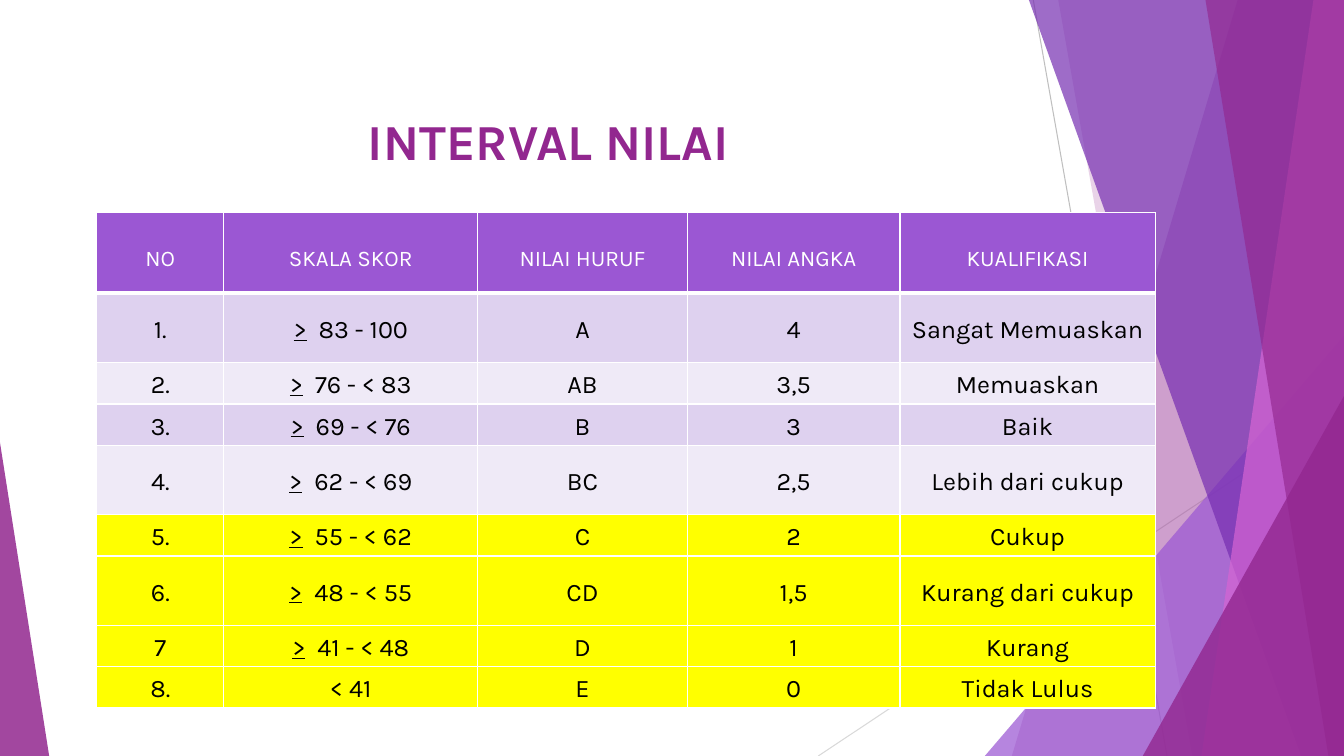
from lxml.etree import SubElement
from pptx import Presentation
from pptx.dml.color import RGBColor
from pptx.enum.shapes import MSO_CONNECTOR, MSO_SHAPE
from pptx.enum.text import MSO_ANCHOR, PP_ALIGN
from pptx.oxml.ns import qn
from pptx.util import Cm, Pt

FONT = "Karla"
COLORS = {
    "plum": "92278F",
    "violet": "9B57D3",
    "indigo": "762EB1",
    "pink": "D665D3",
    "lilac": "DED1EF",
    "pale": "EFEAF7",
    "yellow": "FFFF00",
    "white": "FFFFFF",
    "black": "000000",
    "gray": "BFBFBF",
    "silver": "D9D9D9",
}
WIDTH, HEIGHT = 33.87, 19.05
COLUMN_WIDTHS = [3.2, 6.4, 5.28, 5.36, 6.43]
HEADER_HEIGHT, TALL_ROW, SHORT_ROW = 2.03, 1.75, 1.04
TALL_GRADES = ("A", "BC", "CD")
HEADINGS = ["NO", "SKALA SKOR", "NILAI HURUF", "NILAI ANGKA", "KUALIFIKASI"]
GRADES = [
    ["1.", ">  83 - 100", "A", "4", "Sangat Memuaskan"],
    ["2.", ">  76 - < 83", "AB", "3,5", "Memuaskan"],
    ["3.", ">  69 - < 76", "B", "3", "Baik"],
    ["4.", ">  62 - < 69", "BC", "2,5", "Lebih dari cukup"],
    ["5.", ">  55 - < 62", "C", "2", "Cukup"],
    ["6.", ">  48 - < 55", "CD", "1,5", "Kurang dari cukup"],
    ["7", ">  41 - < 48", "D", "1", "Kurang"],
    ["8.", "< 41", "E", "0", "Tidak Lulus"],
]
FIRST_YELLOW_ROW = 5


def rgb(name):
    return RGBColor.from_string(COLORS[name])


def paint(shape, color, opacity):
    """Give a shape a translucent fill with no outline or shadow."""
    shape.shadow.inherit = False
    shape.line.fill.background()
    shape.fill.solid()
    shape.fill.fore_color.rgb = rgb(color)
    solid_color = shape.element.spPr.find(qn("a:solidFill"))[0]
    SubElement(solid_color, qn("a:alpha"), val=str(opacity * 1000))


def add_line(slide, start, end, color):
    line = slide.shapes.add_connector(
        MSO_CONNECTOR.STRAIGHT, *(Cm(value) for value in (*start, *end)))
    line.line.color.rgb = rgb(color)
    line.line.width = Pt(0.75)
    SubElement(line.element.spPr, qn("a:effectLst"))


def add_band(slide, top_x, bottom_x, color, opacity):
    """Fill the area from a slanted left edge to the slide's right edge."""
    builder = slide.shapes.build_freeform(Cm(top_x), 0)
    corners = [(WIDTH, 0), (WIDTH, HEIGHT), (bottom_x, HEIGHT)]
    builder.add_line_segments([(Cm(x), Cm(y)) for x, y in corners])
    paint(builder.convert_to_shape(), color, opacity)


def add_corner(slide, left, top, width, apex, color, opacity):
    """Add a triangle that stands on the slide's bottom edge."""
    triangle = slide.shapes.add_shape(
        MSO_SHAPE.ISOSCELES_TRIANGLE,
        Cm(left), Cm(top), Cm(width), Cm(HEIGHT - top))
    triangle.adjustments[0] = apex
    paint(triangle, color, opacity)


def add_decoration(slide):
    add_line(slide, (26.04, 0), (29.41, HEIGHT), "gray")
    add_line(slide, (WIDTH, 10.24), (20.62, HEIGHT), "silver")
    add_band(slide, 31.19, 25.5, "plum", 30)
    add_band(slide, 26.67, 30.05, "plum", 20)
    add_corner(slide, 24.82, 8.46, 9.05, 1, "violet", 72)
    add_band(slide, 25.93, 32.79, "indigo", 70)
    add_band(slide, 33.1, 30.28, "pink", 70)
    add_band(slide, 30.38, 33.48, "plum", 65)
    add_corner(slide, 28.8, 9.98, 5.07, 1, "plum", 80)
    add_corner(slide, 0, 11.15, 1.24, 0, "plum", 85)


def format_paragraph(paragraph, size, color, bold=False):
    paragraph.alignment = PP_ALIGN.CENTER
    paragraph.font.name = FONT
    paragraph.font.size = Pt(size)
    paragraph.font.bold = bold
    paragraph.font.color.rgb = rgb(color)


def place_title(slide, text):
    title = slide.shapes.title
    title.left, title.top, title.width, title.height = (
        Cm(1.88), Cm(1.7), Cm(23.88), Cm(3.66))
    title.text_frame.text = text
    title.text_frame.vertical_anchor = MSO_ANCHOR.MIDDLE
    format_paragraph(title.text_frame.paragraphs[0], 36, "plum", bold=True)
    title.element.getparent().append(title.element)


def set_borders(cell, bottom_width):
    properties = cell._tc.get_or_add_tcPr()
    widths = {"a:lnL": 1, "a:lnR": 1, "a:lnT": 1, "a:lnB": bottom_width}
    for tag, width in widths.items():
        border = SubElement(properties, qn(tag), w=str(Pt(width)))
        fill = SubElement(border, qn("a:solidFill"))
        SubElement(fill, qn("a:srgbClr"), val=COLORS["white"])


def write_cell(cell, text, fill, is_header):
    set_borders(cell, 3 if is_header else 1)
    cell.fill.solid()
    cell.fill.fore_color.rgb = rgb(fill)
    cell.vertical_anchor = MSO_ANCHOR.MIDDLE
    cell.margin_left = cell.margin_right = Cm(0.18)
    cell.margin_top = cell.margin_bottom = 0
    paragraph = cell.text_frame.paragraphs[0]
    paragraph.line_spacing = 1.5 if is_header else 1.15
    if text.startswith(">"):
        sign = paragraph.add_run()
        sign.text = ">"
        sign.font.underline = True
        text = text[1:]
    paragraph.add_run().text = text
    format_paragraph(paragraph, 16 if is_header else 18,
                     "white" if is_header else "black")


def row_fill(row):
    if row == 0:
        return "violet"
    if row >= FIRST_YELLOW_ROW:
        return "yellow"
    return "lilac" if row % 2 else "pale"


def add_grade_table(slide):
    rows = [HEADINGS, *GRADES]
    heights = [HEADER_HEIGHT] + [
        TALL_ROW if grade[2] in TALL_GRADES else SHORT_ROW for grade in GRADES]
    table = slide.shapes.add_table(
        len(rows), len(HEADINGS), Cm(2.44), Cm(5.36),
        Cm(sum(COLUMN_WIDTHS)), Cm(sum(heights))).table
    for column, width in zip(table.columns, COLUMN_WIDTHS):
        column.width = Cm(width)
    for row, texts in enumerate(rows):
        table.rows[row].height = Cm(heights[row])
        for column, text in enumerate(texts):
            write_cell(table.cell(row, column), text, row_fill(row), row == 0)


def main():
    presentation = Presentation()
    presentation.slide_width = Cm(WIDTH)
    presentation.slide_height = Cm(HEIGHT)
    slide = presentation.slides.add_slide(presentation.slide_layouts[5])
    add_decoration(slide)
    place_title(slide, "INTERVAL NILAI")
    add_grade_table(slide)
    presentation.save("out.pptx")


if __name__ == "__main__":
    main()
